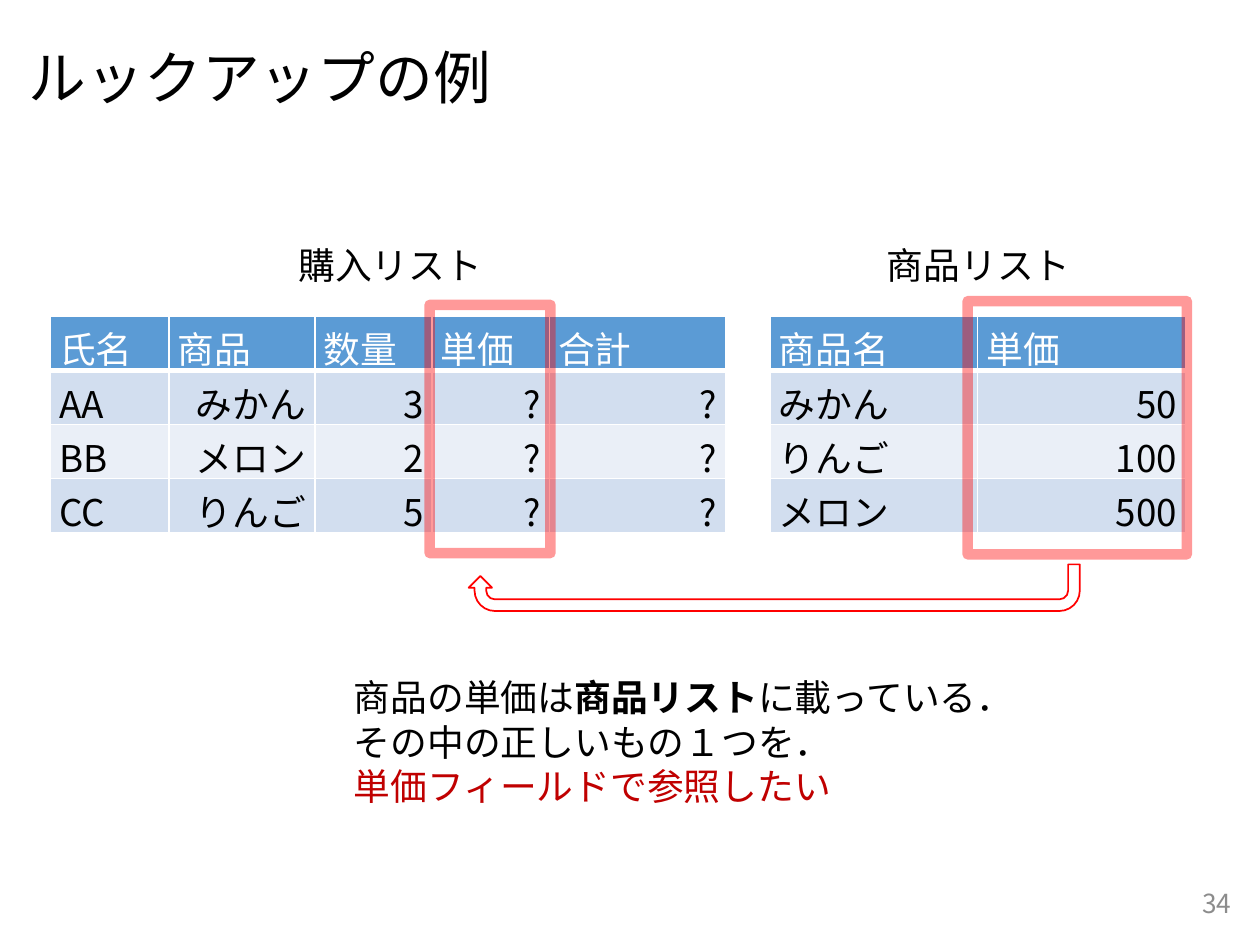
import pptx
import pptx.util
import pptx.dml.color
import pptx.enum.shapes
import pptx.enum.text
import pptx.oxml
import pptx.oxml.ns

Inches = pptx.util.Inches
Pt = pptx.util.Pt
RGB = pptx.dml.color.RGBColor
Align = pptx.enum.text.PP_ALIGN
Anchor = pptx.enum.text.MSO_ANCHOR
Shape = pptx.enum.shapes.MSO_SHAPE
qn = pptx.oxml.ns.qn

BLACK = RGB(0, 0, 0)
WHITE = RGB(0xFF, 0xFF, 0xFF)
GRAY = RGB(0x8C, 0x8C, 0x8C)
RED = RGB(0xFF, 0, 0)
DARK_RED = RGB(0xC0, 0, 0)
HEAD = RGB(0x5B, 0x9B, 0xD5)
BANDS = [RGB(0xEA, 0xEF, 0xF7), RGB(0xD2, 0xDE, 0xEF)]
SANS = "Noto Sans CJK JP"


def style(run, size=21, color=BLACK, face=SANS, bold=False):
    font = run.font
    font.size, font.name, font.bold = Pt(size), face, bold
    font.color.rgb = color
    east = font._element.makeelement(qn("a:ea"), {"typeface": SANS})
    font._element.find(qn("a:latin")).addnext(east)


def add_title(slide, box, text):
    title = slide.shapes.title
    title.left, title.top, title.width, title.height = map(Inches, box)
    frame = title.text_frame
    frame.text = text
    frame.vertical_anchor = Anchor.MIDDLE
    para = frame.paragraphs[0]
    para.alignment, para.line_spacing = Align.LEFT, 0.9
    style(para.runs[0], 33, face="Cabin")


def add_text(slide, box, lines):
    """Place one paragraph per line; a line is a list of (text, style) parts."""
    frame = slide.shapes.add_textbox(*map(Inches, box)).text_frame
    frame.word_wrap = False
    for i, parts in enumerate(lines):
        para = frame.add_paragraph() if i else frame.paragraphs[0]
        for text, look in parts:
            run = para.add_run()
            run.text = text
            style(run, **look)
    return frame


def add_number(slide, box, text):
    frame = add_text(slide, box, [[(text, {"size": 15, "color": GRAY})]])
    frame.word_wrap = True
    frame.vertical_anchor = Anchor.MIDDLE
    frame.paragraphs[0].alignment = Align.RIGHT


def add_edges(cell, base):
    """Draw white borders, the bottom one with its own width."""
    props = cell._tc.get_or_add_tcPr()
    for side, width in zip("LRTB", (1, 1, 1, base)):
        props.append(pptx.oxml.parse_xml(
            f'<a:ln{side} {pptx.oxml.ns.nsdecls("a")} w="{Pt(width)}">'
            f'<a:solidFill><a:srgbClr val="{WHITE}"/></a:solidFill></a:ln{side}>'))


def add_list(slide, box, widths, rows):
    """Place a table whose first column is left aligned and the rest right."""
    frame = slide.shapes.add_table(len(rows), len(widths), *map(Inches, box))
    table = frame.table
    for col, width in zip(table.columns, widths):
        col.width = Inches(width)
    for r, row in enumerate(rows):
        table.rows[r].height = Inches(box[3] / len(rows))
        for c, text in enumerate(row):
            cell = table.cell(r, c)
            cell.margin_left = cell.margin_right = Inches(0.07)
            cell.margin_top = cell.margin_bottom = Inches(0.04)
            add_edges(cell, 1 if r else 3)
            cell.fill.solid()
            cell.fill.fore_color.rgb = BANDS[r % 2] if r else HEAD
            cell.text_frame.text = text
            para = cell.text_frame.paragraphs[0]
            para.alignment = Align.RIGHT if r and c else Align.LEFT
            style(para.runs[0], color=BLACK if r else WHITE)


def add_outline(slide, kind, box, width):
    shape = slide.shapes.add_shape(kind, *map(Inches, box))
    shape.shadow.inherit = False
    shape.fill.background()
    shape.line.color.rgb = RED
    shape.line.width = Pt(width)
    return shape


def add_mark(slide, box):
    """Frame a column with a translucent red line."""
    mark = add_outline(slide, Shape.RECTANGLE, box, 6)
    color = mark.line._ln.find(".//" + qn("a:srgbClr"))
    color.append(color.makeelement(qn("a:alpha"), {"val": "40000"}))


def add_arrow(slide, box):
    arrow = add_outline(slide, Shape.U_TURN_ARROW, box, 1)
    frame = arrow._element.spPr.find(qn("a:xfrm"))
    frame.set("flipH", "1")
    frame.set("flipV", "1")


def main():
    deck = pptx.Presentation()
    deck.slide_width, deck.slide_height = Inches(10), Inches(7.5)
    slide = deck.slides.add_slide(deck.slide_layouts[5])

    add_title(slide, (0.13, 0.21, 9.65, 0.86), "ルックアップの例")
    add_number(slide, (7.62, 6.97, 2.25, 0.4), "34")

    add_list(slide, (6.11, 2.51, 3.29, 1.7), [1.65, 1.65], [
        ["商品名", "単価"],
        ["みかん", "50"],
        ["りんご", "100"],
        ["メロン", "500"]])
    add_text(slide, (6.94, 1.88, 1.67, 0.45), [[("商品リスト", {})]])

    add_list(slide, (0.4, 2.51, 5.36, 1.7), [0.94, 1.16, 0.93, 0.93, 1.4], [
        ["氏名", "商品", "数量", "単価", "合計"],
        ["AA", "みかん", "3", "?", "?"],
        ["BB", "メロン", "2", "?", "?"],
        ["CC", "りんご", "5", "?", "?"]])
    add_text(slide, (2.71, 5.31, 5.5, 1.16), [
        [("商品の単価は", {}), ("商品リスト", {"bold": True}),
         ("に載っている．", {})],
        [("その中の正しいもの１つを．", {})],
        [("単価フィールドで参照したい", {"color": DARK_RED})]])
    add_text(slide, (2.27, 1.88, 1.67, 0.45), [[("購入リスト", {})]])

    add_mark(slide, (7.68, 2.39, 1.74, 2.01))
    add_mark(slide, (3.41, 2.42, 0.96, 1.97))
    add_arrow(slide, (3.72, 4.48, 4.85, 0.37))

    deck.save("out.pptx")


if __name__ == "__main__":
    main()
